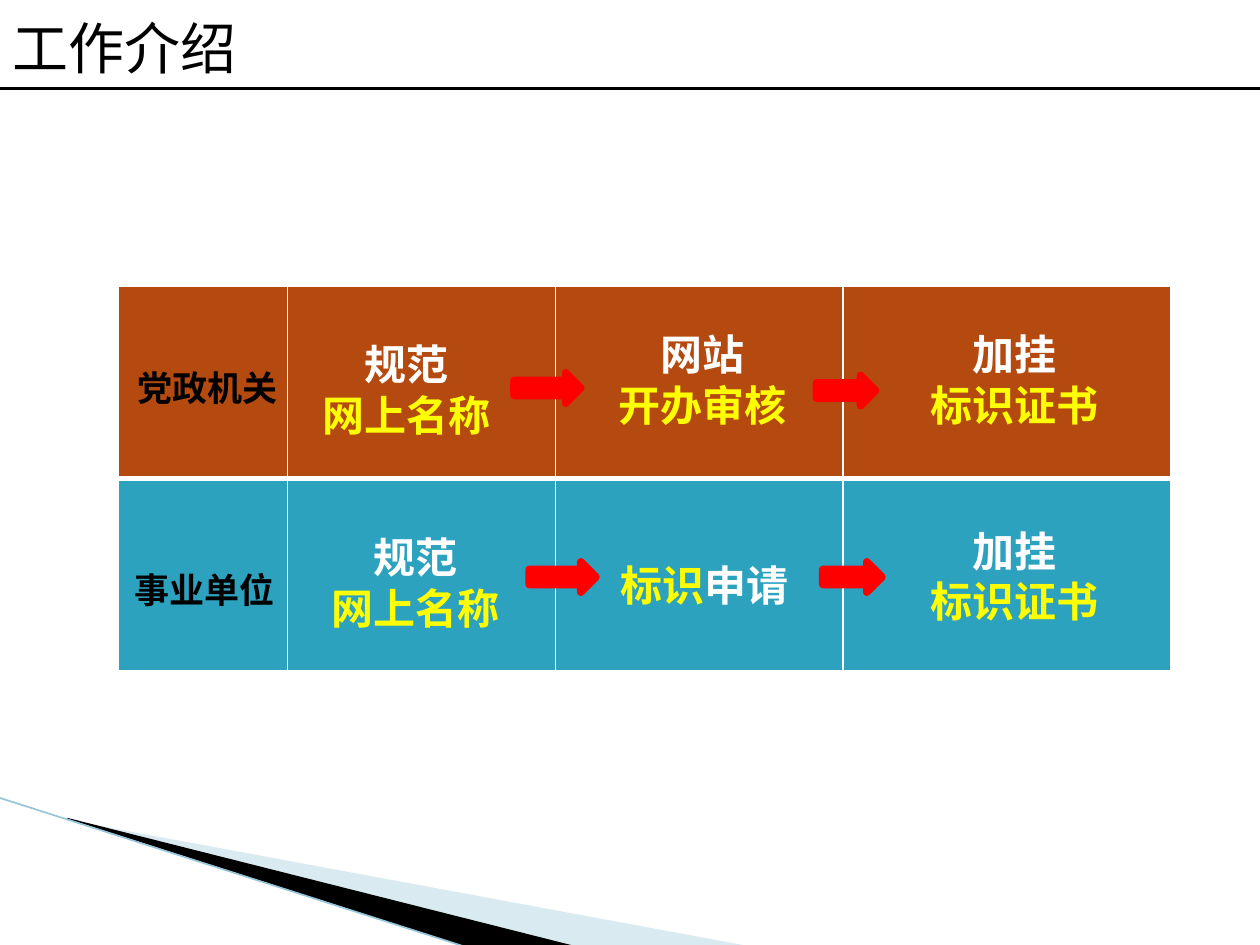
from dataclasses import dataclass

from lxml import etree
from pptx import Presentation
from pptx import util as u
from pptx.dml.color import RGBColor
from pptx.enum import shapes, text
from pptx.oxml import ns


@dataclass(frozen=True)
class Theme:
    ink: str = "000000"
    white: str = "FFFFFF"
    accent: str = "FFFF00"
    arrow: str = "FF0000"
    party: str = "B54A10"
    institution: str = "2DA2BF"
    pale: str = "A0CBDC"
    edge: str = "97C5D8"
    heading: int = 32
    step: int = 24
    label: int = 20
    mono: str = "Courier New"
    sans: str = "Arial"


class Deck:
    def __init__(self, theme):
        self.theme = theme
        self.file = Presentation()
        self.file.slide_width = u.Inches(10)
        self.file.slide_height = u.Inches(7.5)
        self.slide = self.file.slides.add_slide(self.file.slide_layouts[6])

    def fill(self, target, color):
        target.fill.solid()
        target.fill.fore_color.rgb = RGBColor.from_string(color)

    def wedge(self, corners, color, opacity=None):
        points = [(u.Inches(x), u.Inches(y)) for x, y in corners]
        builder = self.slide.shapes.build_freeform(*points[0])
        builder.add_line_segments(points[1:], close=True)
        wedge = builder.convert_to_shape()
        wedge.shadow.inherit = False
        wedge.line.fill.background()
        self.fill(wedge, color)
        if opacity:
            shade = wedge.fill._xPr.find(".//" + ns.qn("a:srgbClr"))
            etree.SubElement(shade, ns.qn("a:alpha"), val=str(opacity * 1000))

    def rule(self, start, end, color, weight):
        ends = [u.Inches(v) for v in (*start, *end)]
        rule = self.slide.shapes.add_connector(shapes.MSO_CONNECTOR.STRAIGHT, *ends)
        rule.line.color.rgb = RGBColor.from_string(color)
        rule.line.width = u.Pt(weight)
        etree.SubElement(rule._element.spPr, ns.qn("a:effectLst"))

    def arrow(self, left, top, width):
        arrow = self.slide.shapes.add_shape(
            shapes.MSO_SHAPE.RIGHT_ARROW,
            *(u.Inches(v) for v in (left, top, width, 0.24)))
        arrow.shadow.inherit = False
        self.fill(arrow, self.theme.arrow)
        arrow.line.color.rgb = RGBColor.from_string(self.theme.arrow)
        arrow.line.width = u.Pt(4.33)

    def border(self, cell, weights):
        properties = cell._tc.get_or_add_tcPr()
        for place, (side, weight) in enumerate(zip("LRTB", weights)):
            edge = etree.Element(ns.qn("a:ln" + side), w=str(u.Pt(weight)))
            paint = etree.SubElement(edge, ns.qn("a:solidFill"))
            etree.SubElement(paint, ns.qn("a:srgbClr"), val=self.theme.white)
            properties.insert(place, edge)

    def grid(self, left, top, widths, rows):
        heights = [height for height, _, _ in rows]
        area = (left, top, sum(widths), sum(heights))
        grid = self.slide.shapes.add_table(
            len(rows), len(widths), *(u.Inches(v) for v in area)).table
        for column, width in zip(grid.columns, widths):
            column.width = u.Inches(width)
        for row, (height, color, weights) in zip(grid.rows, rows):
            row.height = u.Inches(height)
            for cell in row.cells:
                self.fill(cell, color)
                self.border(cell, weights)

    def words(self, box, lines, size, font, bold=True, centered=True, wrap=True):
        words = self.slide.shapes.add_textbox(*(u.Inches(v) for v in box))
        frame = words.text_frame
        frame.word_wrap = wrap
        frame.auto_size = text.MSO_AUTO_SIZE.SHAPE_TO_FIT_TEXT
        for number, line in enumerate(lines):
            paragraph = frame.add_paragraph() if number else frame.paragraphs[0]
            paragraph.alignment = text.PP_ALIGN.CENTER if centered else text.PP_ALIGN.LEFT
            for wording, color in line:
                run = paragraph.add_run()
                run.text = wording
                run.font.size = u.Pt(size)
                run.font.bold = bold
                run.font.name = font
                run.font.color.rgb = RGBColor.from_string(color)
                etree.SubElement(run._r.get_or_add_rPr(), ns.qn("a:ea"), typeface=font)

    def step(self, left, top, width, action, subject, font):
        lines = [[(action, self.theme.white)], [(subject, self.theme.accent)]]
        self.words((left, top, width, 0.91), lines, self.theme.step, font)


def main():
    theme = Theme()
    deck = Deck(theme)

    deck.wedge([(0.55, 6.51), (5.95, 7.51), (4.56, 7.51), (0.55, 6.5)], theme.pale, 40)
    deck.wedge([(0.53, 6.49), (4.57, 7.51), (3.72, 7.52), (0.54, 6.5)], theme.ink)
    deck.rule((-0.01, 6.33), (3.71, 7.52), theme.edge, 0.95)

    deck.grid(0.94, 2.27, [1.34, 2.13, 2.28, 2.6], [
        (1.53, theme.party, (1, 1, 1, 3)),
        (1.52, theme.institution, (1, 1, 1, 1)),
    ])

    for left, top, organ in [(0.99, 2.86, "党政机关"), (0.97, 4.46, "事业单位")]:
        deck.words((left, top, 1.32, 0.44), [[(organ, theme.ink)]],
                   theme.label, theme.mono, centered=False)

    for left, top in [(2.41, 2.64), (2.48, 4.17)]:
        deck.step(left, top, 1.64, "规范", "网上名称", theme.mono)
    deck.step(4.75, 2.56, 1.65, "网站", "开办审核", theme.sans)
    deck.words((4.83, 4.39, 1.56, 0.5),
               [[("标识", theme.accent), ("申请", theme.white)]],
               theme.step, theme.mono, centered=False)
    for top in (2.56, 4.12):
        deck.step(7.27, top, 1.56, "加挂", "标识证书", theme.sans)

    for left, top, width in [(4.08, 2.96, 0.53), (6.48, 2.98, 0.47),
                             (4.2, 4.46, 0.53), (6.53, 4.46, 0.47)]:
        deck.arrow(left, top, width)

    deck.rule((0, 0.7), (10, 0.7), theme.ink, 1.5)
    deck.words((0, 0.06, 2, 0.64), [[("工作介绍", theme.ink)]], theme.heading,
               theme.mono, bold=False, centered=False, wrap=False)

    deck.file.save("out.pptx")


if __name__ == "__main__":
    main()
